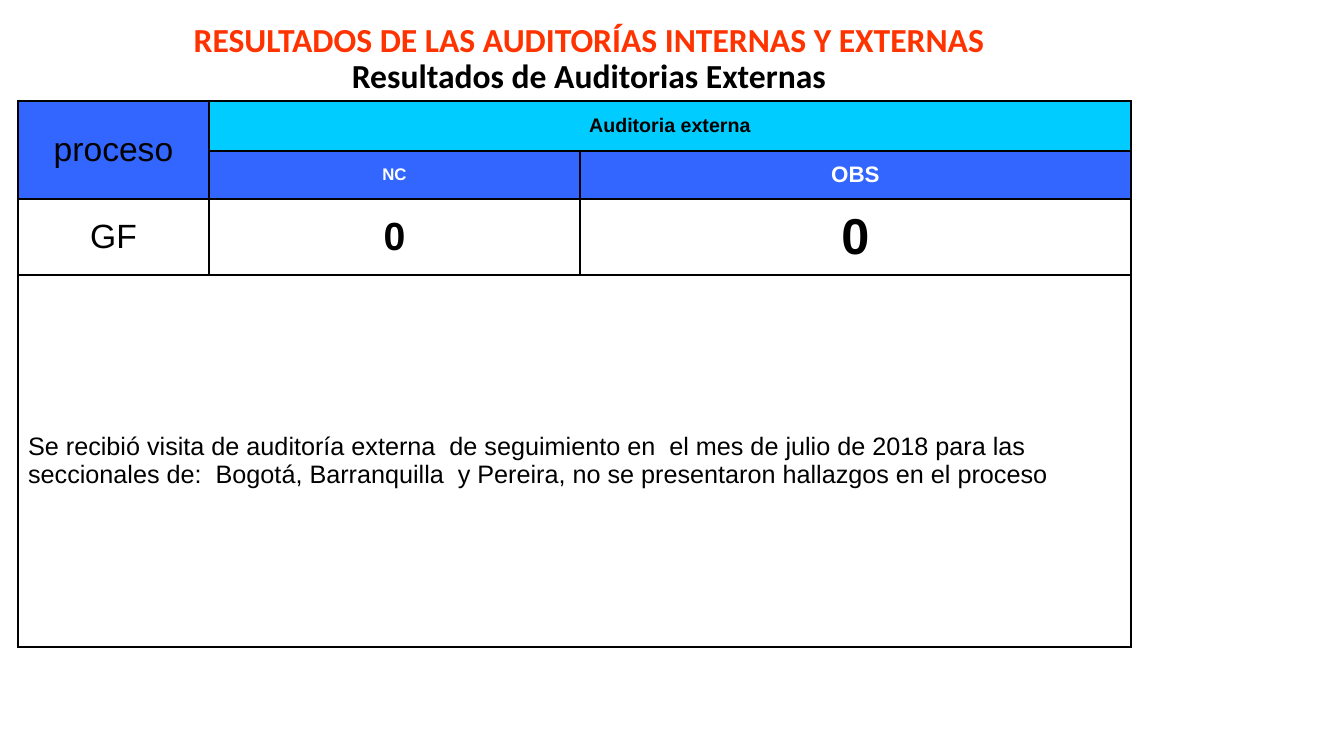
from lxml import etree
from pptx import Presentation
from pptx.dml.color import RGBColor
from pptx.enum.text import MSO_ANCHOR, MSO_AUTO_SIZE, PP_ALIGN
from pptx.oxml.ns import qn
from pptx.util import Pt

PX = 914400 / 100.8
COLORS = {
    "red": "FF3300",
    "black": "000000",
    "white": "FFFFFF",
    "blue": "3366FF",
    "cyan": "00CCFF",
}
MIDDLE, BOTTOM = MSO_ANCHOR.MIDDLE, MSO_ANCHOR.BOTTOM
NO_AUTOFIT = MSO_AUTO_SIZE.NONE
CENTER, JUSTIFY = PP_ALIGN.CENTER, PP_ALIGN.JUSTIFY
TITLE_ONLY_LAYOUT = 5

TITLE_BOX = (59, -25, 1060, 126)
TABLE_BOX = (18, 101, 1113, 546)
COLUMN_WIDTHS = (191, 371, 551)
ROW_HEIGHTS = (50, 48, 76, 372)
HANGING_INDENT = 38
FINDINGS = (
    "Se recibió visita de auditoría externa  de seguimiento en  el mes de julio de 2018 para las\n"
    "seccionales de:  Bogotá, Barranquilla  y Pereira, no se presentaron hallazgos en el proceso"
)
MERGES = (((0, 0), (1, 0)), ((0, 1), (0, 2)), ((3, 0), (3, 2)))
CELLS = (
    (0, 0, "proceso", 24, False, "black", "blue", CENTER),
    (0, 1, "Auditoria externa", 14, True, "black", "cyan", CENTER),
    (1, 1, "NC", 12, True, "white", "blue", CENTER),
    (1, 2, "OBS", 16, True, "white", "blue", CENTER),
    (2, 0, "GF", 24, False, "black", None, CENTER),
    (2, 1, "0", 28, True, "black", None, CENTER),
    (2, 2, "0", 36, True, "black", None, CENTER),
    (3, 0, FINDINGS, 18, False, "black", None, JUSTIFY),
)


def emu(pixels):
    """Turn px into whole EMU."""
    return round(pixels * PX)


def style_run(run, font_name, size, bold, color):
    """Give a run its font, size, weight and colour."""
    run.font.name = font_name
    run.font.size = Pt(size)
    run.font.bold = bold
    run.font.color.rgb = RGBColor.from_string(COLORS[color])


def add_title(slide, box):
    """Place the two-line heading in the title placeholder."""
    title = slide.shapes.title
    title.left, title.top, title.width, title.height = map(emu, box)
    frame = title.text_frame
    frame.text = "RESULTADOS DE LAS AUDITORÍAS INTERNAS Y EXTERNAS\vResultados de Auditorias Externas"
    frame.auto_size = NO_AUTOFIT
    frame.word_wrap = True
    frame.vertical_anchor = BOTTOM
    paragraph = frame.paragraphs[0]
    paragraph.alignment = CENTER
    paragraph.line_spacing = 0.9
    for run, color in zip(paragraph.runs, ("red", "black")):
        style_run(run, "Calibri", 24, True, color)


def add_borders(cell):
    """Draw a thin black line on every side of a cell."""
    properties = cell._tc.get_or_add_tcPr()
    for side in ("lnL", "lnR", "lnT", "lnB"):
        line = etree.SubElement(properties, qn(f"a:{side}"), w=str(Pt(1)))
        fill = etree.SubElement(line, qn("a:solidFill"))
        etree.SubElement(fill, qn("a:srgbClr"), val=COLORS["black"])


def fill_cell(cell, text, size, bold, color, background, alignment):
    """Write and format the contents of one cell."""
    if background:
        cell.fill.solid()
        cell.fill.fore_color.rgb = RGBColor.from_string(COLORS[background])
    cell.vertical_anchor = MIDDLE
    cell.text_frame.text = text
    for paragraph in cell.text_frame.paragraphs:
        paragraph.alignment = alignment
        properties = paragraph._p.get_or_add_pPr()
        properties.set("marL", str(emu(HANGING_INDENT)))
        properties.set("indent", str(-emu(HANGING_INDENT)))
        for run in paragraph.runs:
            style_run(run, "Arial", size, bold, color)


def add_audit_table(slide, box):
    """Build the external audit results table."""
    frame = slide.shapes.add_table(len(ROW_HEIGHTS), len(COLUMN_WIDTHS), *map(emu, box))
    table = frame.table
    table.first_row = False
    table.horz_banding = False
    for column, width in zip(table.columns, COLUMN_WIDTHS):
        column.width = emu(width)
    for row, height in zip(table.rows, ROW_HEIGHTS):
        row.height = emu(height)
    for cell in table.iter_cells():
        add_borders(cell)
        cell.fill.background()
    for first, last in MERGES:
        table.cell(*first).merge(table.cell(*last))
    for row, column, *content in CELLS:
        fill_cell(table.cell(row, column), *content)


def main():
    """Create and save the presentation."""
    presentation = Presentation()
    presentation.slide_width = emu(1344)
    presentation.slide_height = emu(756)
    slide = presentation.slides.add_slide(presentation.slide_layouts[TITLE_ONLY_LAYOUT])
    add_title(slide, TITLE_BOX)
    add_audit_table(slide, TABLE_BOX)
    presentation.save("out.pptx")


if __name__ == "__main__":
    main()
